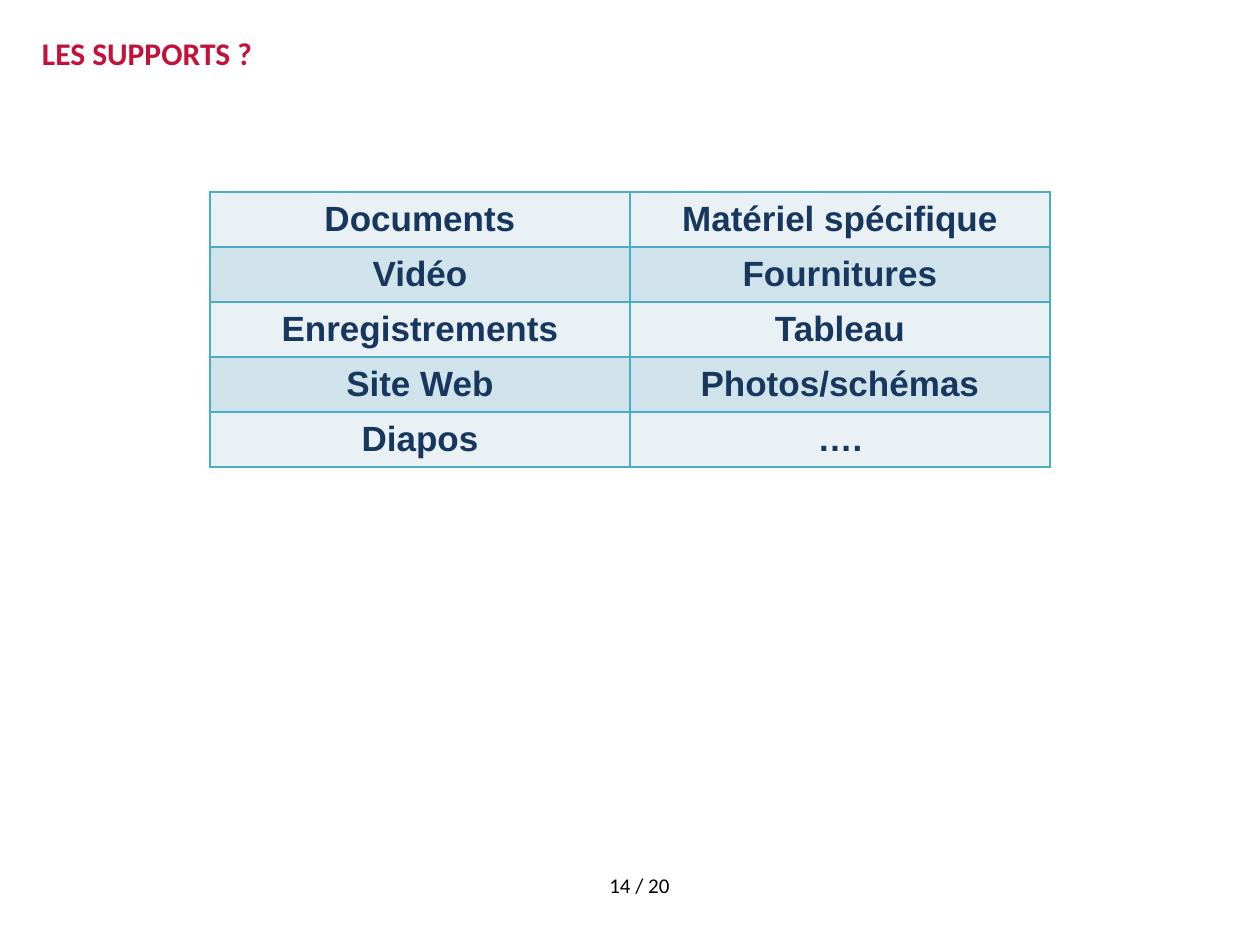
from lxml.etree import SubElement
from pptx import Presentation
from pptx.dml.color import RGBColor
from pptx.enum.shapes import MSO_SHAPE
from pptx.enum.text import MSO_ANCHOR, MSO_AUTO_SIZE, PP_ALIGN
from pptx.oxml.ns import qn
from pptx.util import Pt

PX = 914400 // 126
COLORS = {
    "title": "C2113A",
    "cell_text": "17375E",
    "border": "4BACC6",
    "light": "E9F1F5",
    "dark": "D0E3EA",
    "white": "FFFFFF",
    "black": "000000",
}
SUPPORTS = [
    ("Documents", "Matériel spécifique"),
    ("Vidéo", "Fournitures"),
    ("Enregistrements", "Tableau"),
    ("Site Web", "Photos/schémas"),
    ("Diapos", "…."),
]


def px(*lengths):
    return [length * PX for length in lengths]


def color(name):
    return RGBColor.from_string(COLORS[name])


def write(frame, text, font, size, ink, bold=False, align=PP_ALIGN.CENTER):
    para = frame.paragraphs[0]
    para.text = text
    para.alignment = align
    para.font.name = font
    para.font.size = Pt(size)
    para.font.bold = bold
    para.font.color.rgb = color(ink)
    return para


def add_title(page, text):
    box = page.shapes.add_shape(MSO_SHAPE.RECTANGLE, *px(42, 37, 1176, 96))
    box.shadow.inherit = False
    box.fill.solid()
    box.fill.fore_color.rgb = color("white")
    box.line.fill.background()
    frame = box.text_frame
    frame.margin_left = frame.margin_top = 0
    frame.margin_right = frame.margin_bottom = 0
    frame.vertical_anchor = MSO_ANCHOR.TOP
    para = write(frame, text, "Calibri", 18, "title", True, PP_ALIGN.JUSTIFY)
    para.line_spacing = Pt(20)
    para.space_after = Pt(12)


def add_borders(cell):
    properties = cell._tc.get_or_add_tcPr()
    for position, side in enumerate(("a:lnL", "a:lnR", "a:lnT", "a:lnB")):
        line = properties.makeelement(qn(side), {"w": str(Pt(1))})
        fill = SubElement(line, qn("a:solidFill"))
        SubElement(fill, qn("a:srgbClr"), val=COLORS["border"])
        properties.insert(position, line)


def add_supports_table(page, rows):
    row_height = 55
    table = page.shapes.add_table(
        len(rows), 2, *px(210, 192, 840, row_height * len(rows))).table
    for row_index, texts in enumerate(rows):
        for column_index, text in enumerate(texts):
            cell = table.cell(row_index, column_index)
            cell.vertical_anchor = MSO_ANCHOR.MIDDLE
            cell.fill.solid()
            cell.fill.fore_color.rgb = color("dark" if row_index % 2 else "light")
            add_borders(cell)
            write(cell.text_frame, text, "Arial", 20, "cell_text", True)


def add_page_number(page, text):
    box = page.shapes.add_textbox(*px(552, 866, 175, 39))
    box.text_frame.word_wrap = True
    box.text_frame.auto_size = MSO_AUTO_SIZE.SHAPE_TO_FIT_TEXT
    write(box.text_frame, text, "Calibri", 12, "black")


def main():
    deck = Presentation()
    deck.slide_width, deck.slide_height = px(1260, 945)
    page = deck.slides.add_slide(deck.slide_layouts[6])

    # Heading, table of supports, footer
    add_title(page, "LES SUPPORTS ?")
    add_supports_table(page, SUPPORTS)
    add_page_number(page, "14 / 20")

    deck.save("out.pptx")


if __name__ == "__main__":
    main()
